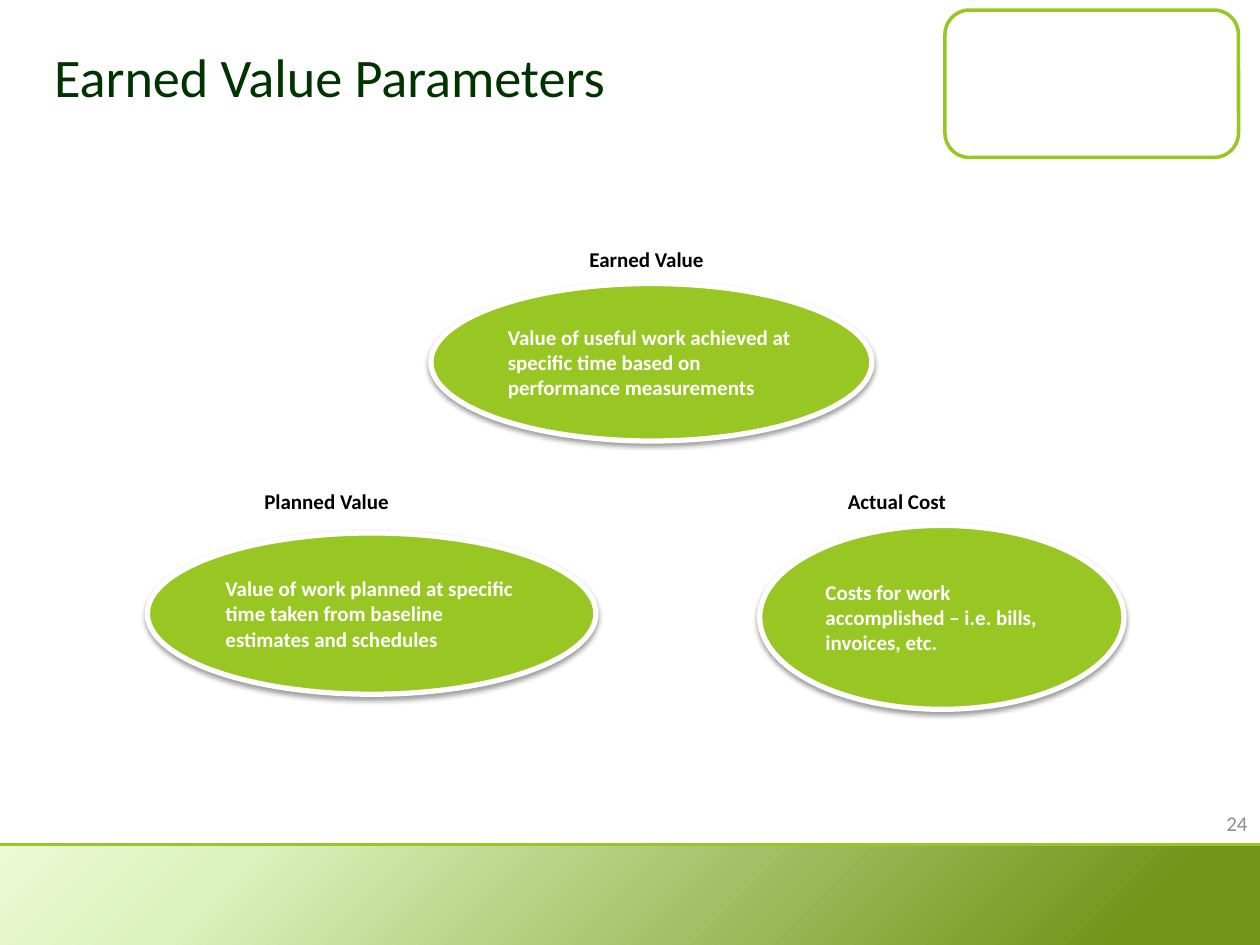
from copy import deepcopy

from lxml.etree import SubElement
from pptx import Presentation
from pptx.dml.color import RGBColor
from pptx.enum.shapes import MSO_CONNECTOR, MSO_SHAPE
from pptx.enum.text import MSO_ANCHOR, PP_ALIGN
from pptx.oxml.ns import qn
from pptx.util import Inches, Pt

COLORS = {
    "green": "98C723", "white": "FFFFFF", "black": "000000",
    "title": "003300", "number": "8C8C8C",
}
BAND_STOPS = [(0, "EEF8D5"), (0.19, "DAF2BC"), (0.89, "72951A")]
# label, label box, description, ellipse box
PARAMETERS = [
    ("Planned Value", (2, 3.83, 1.27, 0.3),
     "Value of work planned at specific time taken from baseline estimates and schedules",
     (1.17, 4.23, 3.56, 1.28)),
    ("Actual Cost", (6.63, 3.83, 1.08, 0.3),
     "Costs for work accomplished – i.e. bills, invoices, etc.",
     (6.03, 4.17, 2.89, 1.46)),
    ("Earned Value", (4.58, 1.91, 1.18, 0.3),
     "Value of useful work achieved at specific time based on performance measurements",
     (3.42, 2.25, 3.5, 1.25)),
]


def set_text(sp, text, size, color, bold=False, align=PP_ALIGN.LEFT, anchor=MSO_ANCHOR.MIDDLE):
    tf = sp.text_frame
    tf.word_wrap = True
    tf.vertical_anchor = anchor
    p = tf.paragraphs[0]
    p.text = text
    p.alignment = align
    p.font.name = "Calibri"
    p.font.size = Pt(size)
    p.font.bold = bold
    p.font.color.rgb = RGBColor.from_string(COLORS[color])


def add_filled(shapes, kind, box, fill, line, width):
    sp = shapes.add_shape(kind, *map(Inches, box))
    sp.shadow.inherit = False
    sp.fill.solid()
    sp.fill.fore_color.rgb = RGBColor.from_string(COLORS[fill])
    sp.line.color.rgb = RGBColor.from_string(COLORS[line])
    sp.line.width = Pt(width)
    return sp


prs = Presentation()
prs.slide_width, prs.slide_height = Inches(10), Inches(7.5)
s = prs.slides.add_slide(prs.slide_layouts[5])

# Frame and footer band
add_filled(s.shapes, MSO_SHAPE.ROUNDED_RECTANGLE, (7.5, 0.08, 2.33, 1.17), "white", "green", 2)

band = s.shapes.add_shape(MSO_SHAPE.RECTANGLE, Inches(0), Inches(6.71), Inches(10), Inches(0.82))
band.shadow.inherit = False
band.line.fill.background()
band.fill.gradient()
band.fill.gradient_angle = 315  # counter-clockwise: runs towards the lower right
stops = band._element.spPr.find(qn("a:gradFill")).find(qn("a:gsLst"))
stops.append(deepcopy(stops[-1]))
for stop, (position, color) in zip(band.fill.gradient_stops, BAND_STOPS):
    stop.position = position
    stop.color.rgb = RGBColor.from_string(color)

rule = s.shapes.add_connector(MSO_CONNECTOR.STRAIGHT, Inches(0), Inches(6.7), Inches(10), Inches(6.7))
rule.line.color.rgb = RGBColor.from_string(COLORS["green"])
rule.line.width = Pt(1.5)
SubElement(rule._element.spPr, qn("a:effectLst"))

# Title, brought in front of the frame
title = s.shapes.title
title.left, title.top, title.width, title.height = map(Inches, (0.33, 0, 9.52, 1.21))
set_text(title, "Earned Value Parameters", 31, "title")
s.shapes._spTree.append(title._element)

# Labelled ellipses
for label, label_box, description, ellipse_box in PARAMETERS:
    group = s.shapes.add_group_shape()
    ellipse = add_filled(group.shapes, MSO_SHAPE.OVAL, ellipse_box, "green", "white", 3)
    set_text(ellipse, description, 12, "white", bold=True)
    effects = ellipse._element.spPr.find(qn("a:effectLst"))
    shadow = SubElement(effects, qn("a:outerShdw"), blurRad=str(Pt(3.1)), dist=str(Pt(1.6)),
                        dir="5400000", rotWithShape="0")
    shade = SubElement(shadow, qn("a:srgbClr"), val=COLORS["black"])
    SubElement(shade, qn("a:alpha"), val="38000")

    caption = group.shapes.add_textbox(*map(Inches, label_box))
    set_text(caption, label, 12, "black", bold=True, anchor=MSO_ANCHOR.TOP)
    caption.text_frame.word_wrap = False

number = s.shapes.add_textbox(Inches(7.67), Inches(6.33), Inches(2.33), Inches(0.4))
set_text(number, "24", 12, "number", align=PP_ALIGN.RIGHT)

prs.save("out.pptx")
